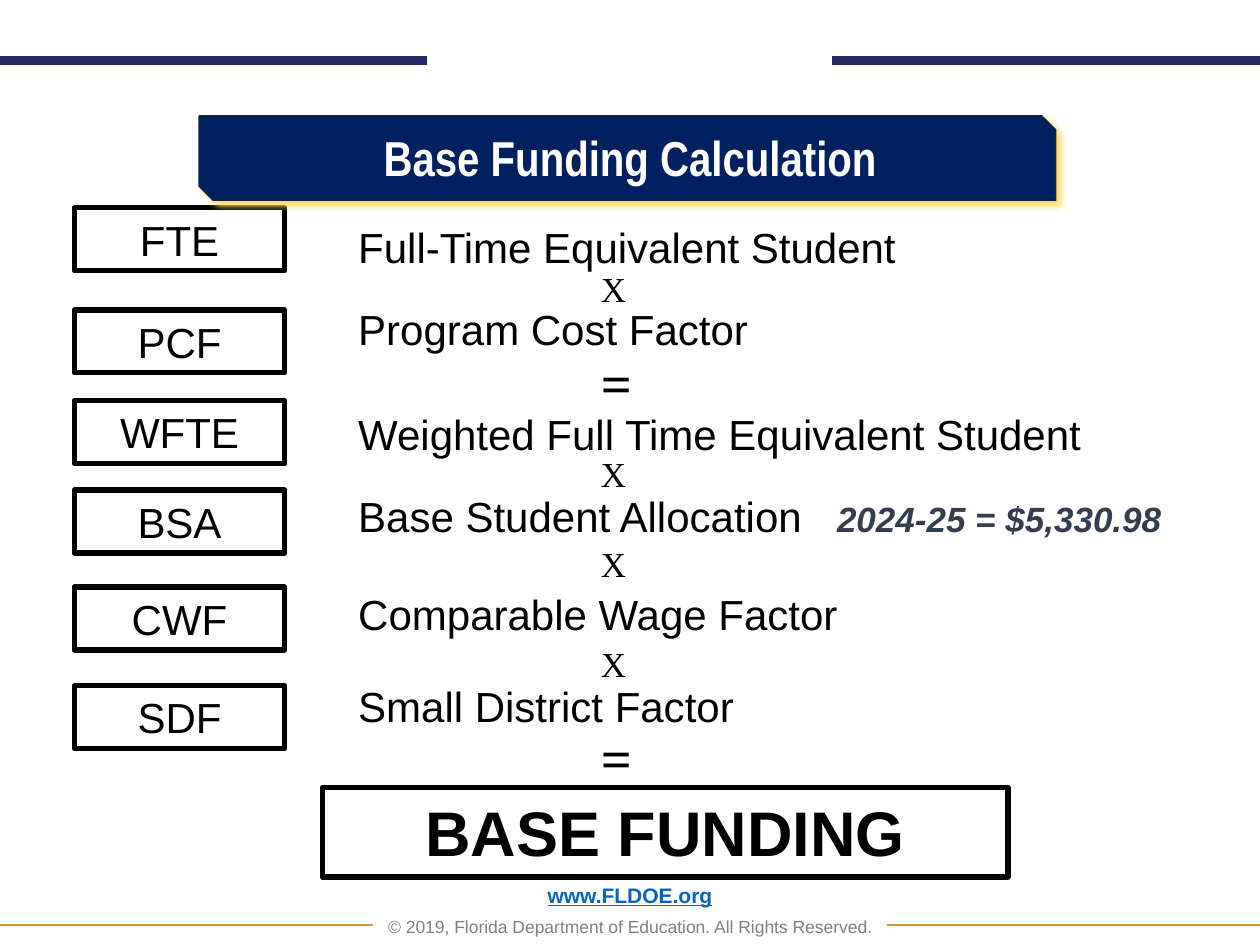
from dataclasses import dataclass
from typing import NamedTuple, Optional

from lxml.etree import SubElement
from pptx import Presentation
from pptx.dml.color import RGBColor
from pptx.enum.shapes import MSO_CONNECTOR, MSO_SHAPE
from pptx.enum.text import MSO_ANCHOR as Anchor, PP_ALIGN as Align
from pptx.oxml.ns import qn
from pptx.util import Inches, Pt

COLUMNS, ROWS = 100, 75
WIDTH, HEIGHT = Inches(10), Inches(7.5)


@dataclass(frozen=True)
class Theme:
    sans: str = "Arial"
    narrow: str = "Arial Narrow"
    serif: str = "Times New Roman"
    ink: str = "000000"
    white: str = "FFFFFF"
    navy: str = "002060"
    navy_edge: str = "0F273D"
    glow: str = "FFD966"
    header_rule: str = "262A63"
    footer_rule: str = "CD9D2C"
    link: str = "0563C1"
    grey: str = "808080"
    slate: str = "333F50"
    result: int = 36
    equals: int = 31
    title: int = 28
    body: int = 24
    times: int = 20
    address: int = 12
    rights: int = 10


THEME = Theme()


class Area(NamedTuple):
    """A place on the grid, in columns and rows."""
    left: float
    top: float
    width: float
    height: float


class Style(NamedTuple):
    size: float
    color: str = THEME.ink
    face: str = THEME.sans
    bold: bool = False
    italic: bool = False
    underline: bool = False


class Factor(NamedTuple):
    acronym: str
    box_row: float
    meaning: str
    meaning_row: float
    operator: str
    operator_row: float
    amount: Optional[str] = None


class Rule(NamedTuple):
    start: float
    end: float
    row: float
    color: str
    weight: float


FACTORS = [
    Factor("FTE", 16.5, "Full-Time Equivalent Student", 17.1, "X", 20.7),
    Factor("PCF", 24.6, "Program Cost Factor", 23.6, "=", 27.2),
    Factor("WFTE", 31.8, "Weighted Full Time Equivalent Student", 31.9, "X", 35.4),
    Factor("BSA", 38.9, "Base Student Allocation", 38.4, "X", 42.6,
           "2024-25 = $5,330.98"),
    Factor("CWF", 46.6, "Comparable Wage Factor", 46.2, "X", 50.5),
    Factor("SDF", 54.4, "Small District Factor", 53.5, "=", 57),
]
RULES = [
    Rule(0, 33.9, 4.8, THEME.header_rule, 5),
    Rule(66, 100, 4.8, THEME.header_rule, 5),
    Rule(0, 29.6, 73.4, THEME.footer_rule, 1),
    Rule(70.4, 100, 73.4, THEME.footer_rule, 1),
]
OPERATORS = {
    "X": Style(THEME.times, face=THEME.serif),
    "=": Style(THEME.equals, face=THEME.serif, bold=True),
}
BODY = Style(THEME.body)
AMOUNT = Style(THEME.times, THEME.slate, bold=True, italic=True)
AMOUNT_TAB = 38


def col(count: float) -> int:
    return round(WIDTH * count / COLUMNS)


def row(count: float) -> int:
    return round(HEIGHT * count / ROWS)


def place(area: Area) -> tuple:
    return col(area.left), row(area.top), col(area.width), row(area.height)


def set_font(font, style: Style) -> None:
    font.name, font.size = style.face, Pt(style.size)
    font.bold, font.italic, font.underline = style.bold, style.italic, style.underline
    font.color.rgb = RGBColor.from_string(style.color)


def write(shape, text: str, style: Style, align=Align.LEFT):
    frame = shape.text_frame
    frame.word_wrap = True
    frame.vertical_anchor = Anchor.TOP
    paragraph = frame.paragraphs[0]
    paragraph.text, paragraph.alignment = text, align
    set_font(paragraph.font, style)
    return paragraph


def add_label(slide, area: Area, text: str, style: Style, align=Align.LEFT):
    return write(slide.shapes.add_textbox(*place(area)), text, style, align)


def add_box(slide, area: Area, text: str, style: Style) -> None:
    box = slide.shapes.add_shape(MSO_SHAPE.RECTANGLE, *place(area))
    box.shadow.inherit = False
    box.fill.background()
    box.line.color.rgb = RGBColor.from_string(THEME.ink)
    box.line.width = Pt(3)
    write(box, text, style, Align.CENTER)


def add_rule(slide, rule: Rule) -> None:
    line = slide.shapes.add_connector(MSO_CONNECTOR.STRAIGHT, col(rule.start),
                                      row(rule.row), col(rule.end), row(rule.row))
    line.line.color.rgb = RGBColor.from_string(rule.color)
    line.line.width = Pt(rule.weight)
    SubElement(line._element.spPr, qn("a:effectLst"))


def add_amount(paragraph, amount: str) -> None:
    """Set the amount after the meaning, at a tab stop."""
    properties = paragraph._p.get_or_add_pPr()
    tabs = SubElement(properties, qn("a:tabLst"))
    SubElement(tabs, qn("a:tab"), pos=str(col(AMOUNT_TAB)), algn="l")
    set_font(paragraph.runs[0].font, BODY)
    properties.remove(properties.find(qn("a:defRPr")))
    run = paragraph.add_run()
    run.text = "\t" + amount
    set_font(run.font, AMOUNT)


def add_factor(slide, factor: Factor) -> None:
    add_box(slide, Area(5.9, factor.box_row, 16.7, 5), factor.acronym, BODY)
    meaning = add_label(slide, Area(27.45, factor.meaning_row, 72, 5),
                        factor.meaning, BODY)
    if factor.amount:
        add_amount(meaning, factor.amount)
    add_label(slide, Area(46.7, factor.operator_row, 5.2, 4.4), factor.operator,
              OPERATORS[factor.operator])


def add_banner(slide) -> None:
    banner = slide.shapes.add_shape(MSO_SHAPE.SNIP_2_DIAG_RECTANGLE,
                                    *place(Area(15.8, 9.2, 68, 6.7)))
    banner.fill.solid()
    banner.fill.fore_color.rgb = RGBColor.from_string(THEME.navy)
    banner.line.color.rgb = RGBColor.from_string(THEME.navy_edge)
    banner.line.width = Pt(0.75)
    banner.shadow.inherit = False
    effects = banner._element.spPr.find(qn("a:effectLst"))
    shadow = SubElement(effects, qn("a:outerShdw"), blurRad=str(Pt(4)),
                        dist=str(Pt(3)), dir=str(45 * 60000), algn="tl",
                        rotWithShape="0")
    SubElement(shadow, qn("a:srgbClr"), val=THEME.glow)
    add_label(slide, Area(17.5, 9.6, 65, 5.7), "Base Funding Calculation",
              Style(THEME.title, THEME.white, THEME.narrow, bold=True), Align.CENTER)


def add_footer(slide) -> None:
    footer = slide.shapes.add_textbox(*place(Area(6.9, 70.6, 86.2, 4.3)))
    address = write(footer, "www.FLDOE.org",
                    Style(THEME.address, THEME.link, bold=True, underline=True),
                    Align.CENTER)
    footer.text_frame.vertical_anchor = Anchor.BOTTOM
    rights = footer.text_frame.add_paragraph()
    rights.text = "© 2019, Florida Department of Education. All Rights Reserved."
    rights.alignment = Align.CENTER
    rights.space_before = Pt(6)
    set_font(rights.font, Style(THEME.rights, THEME.grey))
    address.line_spacing = rights.line_spacing = 0.9


def main() -> None:
    deck = Presentation()
    deck.slide_width, deck.slide_height = WIDTH, HEIGHT
    slide = deck.slides.add_slide(deck.slide_layouts[6])
    add_footer(slide)
    for rule in RULES:
        add_rule(slide, rule)
    for factor in FACTORS:
        add_factor(slide, factor)
    add_box(slide, Area(25.6, 62.5, 54.4, 7.1), "BASE FUNDING",
            Style(THEME.result, bold=True))
    add_banner(slide)
    deck.save("out.pptx")


if __name__ == "__main__":
    main()
